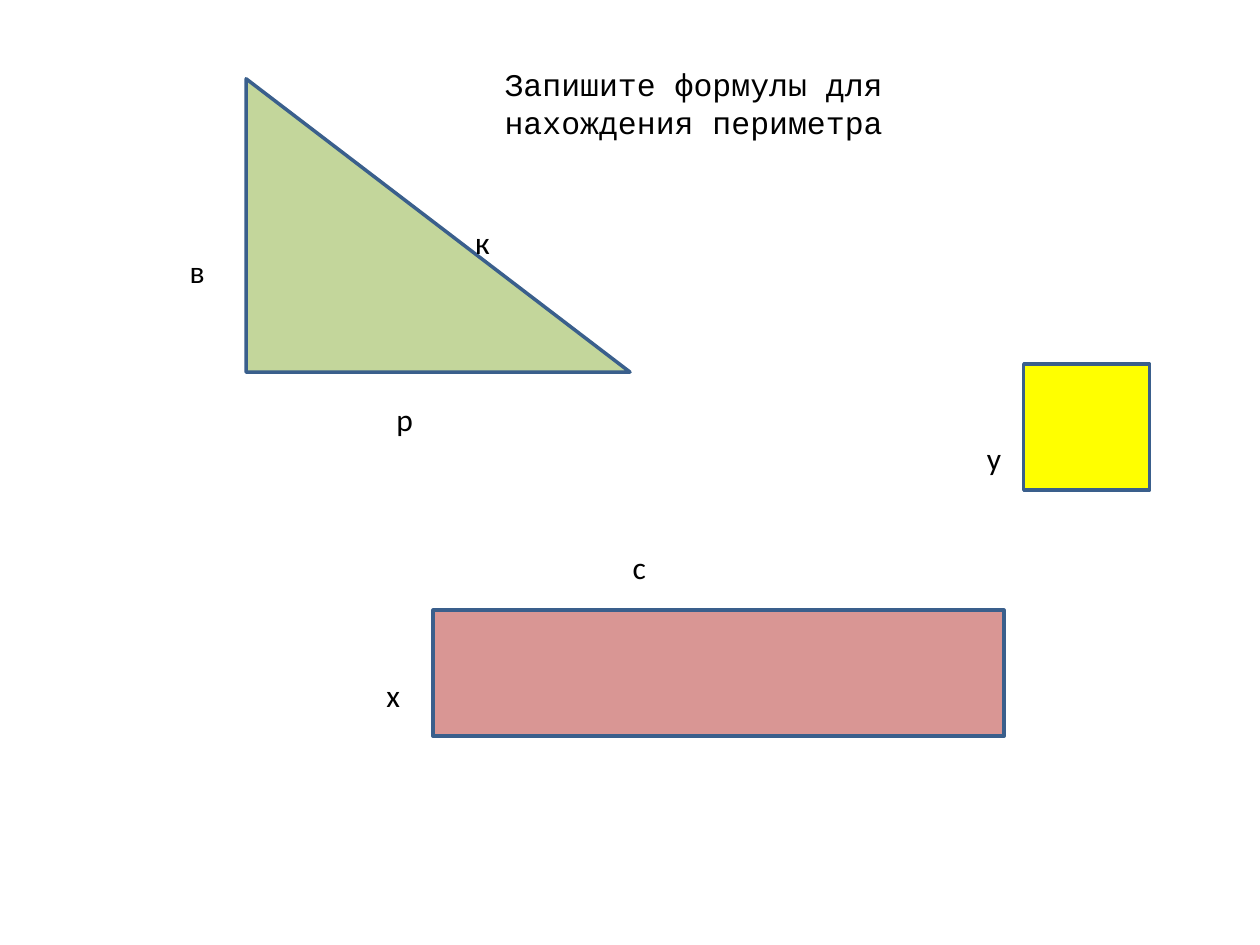
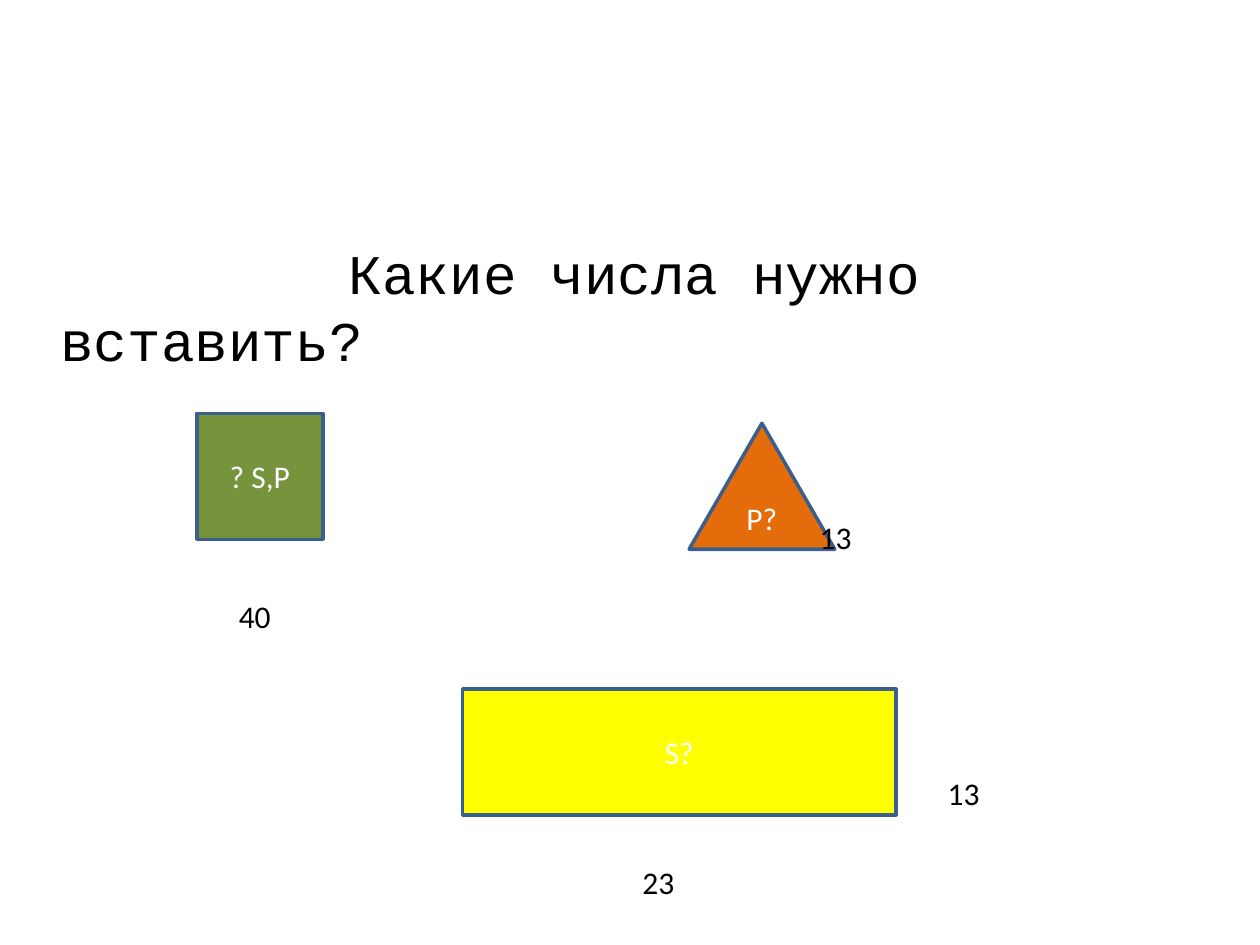
"""Two geometry exercise slides about perimeter and area."""
from pptx import Presentation, util as u
from pptx.dml.color import RGBColor
from pptx.enum import shapes, text

COLOURS = {
    "ink": "000000", "light": "FFFFFF", "outline": "3A5F8C",
    "pale green": "C3D69B", "yellow": "FFFF00", "rose": "D99694",
    "olive": "77933C", "orange": "E46C0A",
}
SIDE = 6.4
FORM = shapes.MSO_SHAPE


class Worksheet:
    """Holds the style and the current slide, measured on a 64 by 48 grid."""

    columns, rows = 64, 48
    label_font, task_font = "Calibri", "Courier New"

    def __init__(self):
        self.deck = Presentation()
        self.deck.slide_width, self.deck.slide_height = u.Inches(10), u.Inches(7.5)

    def new_slide(self):
        self.slide = self.deck.slides.add_slide(self.deck.slide_layouts[6])

    def area(self, column, row, width, height):
        across = self.deck.slide_width / self.columns
        down = self.deck.slide_height / self.rows
        return [u.Emu(round(n)) for n in
                (column * across, row * down, width * across, height * down)]

    def set_words(self, frame, words, colour="ink", font=label_font, size=18):
        frame.text = words
        line = frame.paragraphs[0]
        line.font.name, line.font.size = font, u.Pt(size)
        line.font.color.rgb = RGBColor.from_string(COLOURS[colour])
        return line

    def figure(self, form, column, row, width, height, colour, question=""):
        figure = self.slide.shapes.add_shape(form, *self.area(column, row, width, height))
        figure.shadow.inherit = False
        figure.fill.solid()
        figure.fill.fore_color.rgb = RGBColor.from_string(COLOURS[colour])
        figure.line.color.rgb = RGBColor.from_string(COLOURS["outline"])
        figure.line.width = u.Pt(2)
        if question:
            figure.text_frame.vertical_anchor = text.MSO_ANCHOR.MIDDLE
            line = self.set_words(figure.text_frame, question, "light")
            line.alignment = text.PP_ALIGN.CENTER

    def label(self, words, column, row):
        box = self.slide.shapes.add_textbox(*self.area(column, row, len(words) + 1, 2.6))
        box.text_frame.word_wrap = False
        self.set_words(box.text_frame, words)

    def task(self, words, column, row, width, height, size, hanging=0, first_line=0):
        box = self.slide.shapes.add_textbox(*self.area(column, row, width, height))
        box.text_frame.word_wrap = True
        line = self.set_words(box.text_frame, words, font=self.task_font, size=size)
        if hanging:
            margins = line._p.get_or_add_pPr()
            margins.set("marL", str(u.Inches(hanging)))
            margins.set("indent", str(u.Inches(first_line)))


def perimeter_formulas(sheet):
    sheet.new_slide()
    sheet.figure(FORM.RIGHT_TRIANGLE, 12.5, 4, 19.5, 14.9, "pale green")
    sheet.figure(FORM.RECTANGLE, 52, 18.5, SIDE, SIDE, "yellow")
    sheet.figure(FORM.RECTANGLE, 22, 31, 29, SIDE, "rose")
    sheet.task("Запишите формулы для нахождения периметра", 25, 3, 22, 4.4, 18)
    for side, column, row in (("в", 9, 12.5), ("р", 19.5, 20), ("к", 23.5, 11),
                              ("у", 49.5, 22), ("с", 31.5, 27.5), ("х", 19, 34)):
        sheet.label(side, column, row)


def missing_numbers(sheet):
    sheet.new_slide()
    sheet.task("Какие числа нужно вставить?", 0, 11.8, 57.6, 31, 32,
               hanging=0.38, first_line=2.29)
    sheet.figure(FORM.RECTANGLE, 10, 21, SIDE, SIDE, "olive", "? S,P")
    sheet.figure(FORM.ISOSCELES_TRIANGLE, 35, 21.5, 7.4, SIDE, "orange", "P?")
    sheet.figure(FORM.RECTANGLE, 23.5, 35, 22, SIDE, "yellow", "S?")
    for number, column, row in (("40", 11.5, 30), ("13", 41, 26),
                                ("23", 32, 43.5), ("13", 47.5, 39)):
        sheet.label(number, column, row)


def main():
    sheet = Worksheet()
    perimeter_formulas(sheet)
    missing_numbers(sheet)
    sheet.deck.save("out.pptx")


if __name__ == "__main__":
    main()
